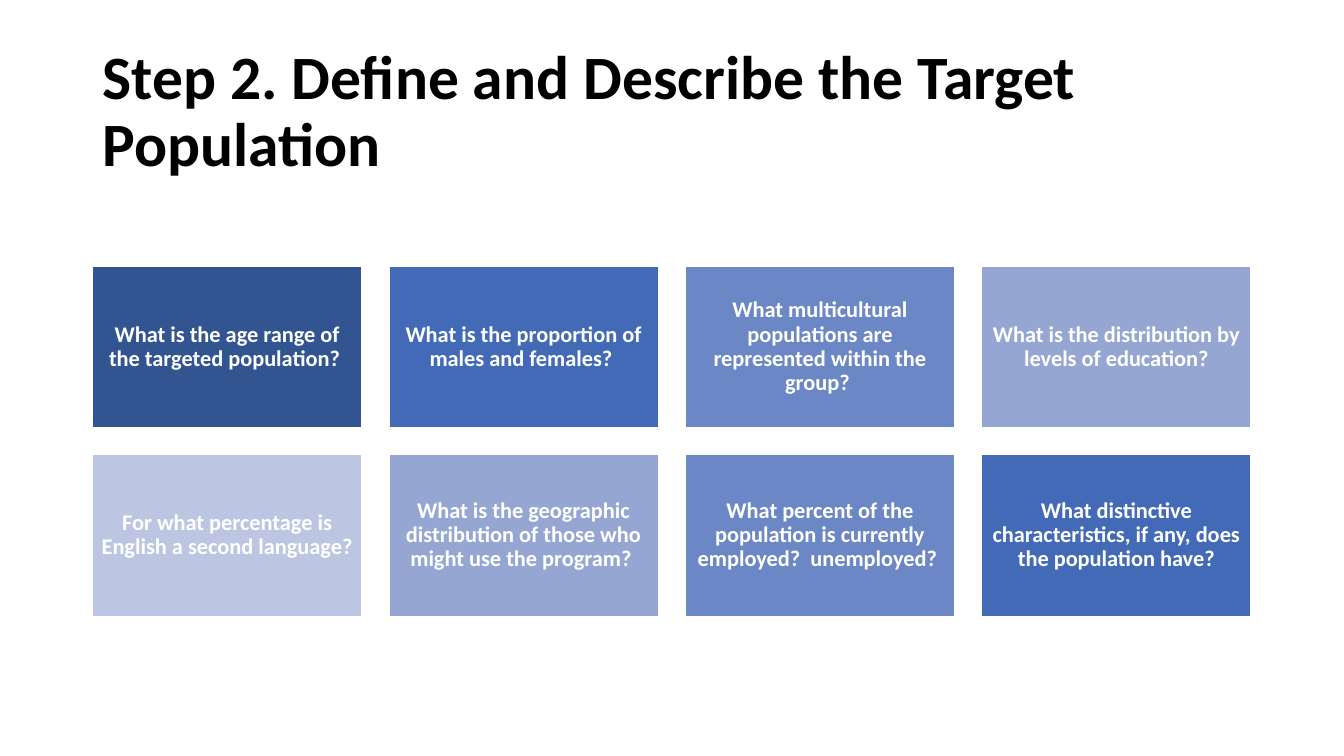
from dataclasses import dataclass

from pptx import Presentation
from pptx.dml.color import RGBColor
from pptx.enum.shapes import MSO_SHAPE
from pptx.enum.text import MSO_ANCHOR, PP_ALIGN
from pptx.slide import Slide
from pptx.text.text import TextFrame
from pptx.util import Cm, Pt

RECTANGLE = MSO_SHAPE.RECTANGLE
MIDDLE = MSO_ANCHOR.MIDDLE
LEFT = PP_ALIGN.LEFT
CENTER = PP_ALIGN.CENTER

FONT = "Calibri"
COLORS = {
    "black": "000000",
    "white": "FFFFFF",
    "navy": "325491",
    "blue": "436AB7",
    "medium": "6C87C5",
    "light": "95A6D3",
    "pale": "BCC6E2",
}

COLUMNS = 4
GRID_LEFT = 2.33
GRID_TOP = 6.71
CARD_WIDTH = 6.79
CARD_HEIGHT = 4.07
GAP = 0.68
CARD_INSET = 0.17


@dataclass(frozen=True)
class Question:
    text: str
    color: str


QUESTIONS = [
    Question("What is the age range of the targeted population? ", "navy"),
    Question("What is the proportion of males and females? ", "blue"),
    Question("What multicultural populations are represented within the group? ", "medium"),
    Question("What is the distribution by levels of education?", "light"),
    Question("For what percentage is English a second language?", "pale"),
    Question("What is the geographic distribution of those who might use the program? ", "light"),
    Question("What percent of the population is currently employed?  unemployed? ", "medium"),
    Question("What distinctive characteristics, if any, does the population have?", "blue"),
]


def color_of(name: str) -> RGBColor:
    return RGBColor.from_string(COLORS[name])


def write_text(
    text_frame: TextFrame, text: str, *, size: float, color: str, alignment: PP_ALIGN
) -> None:
    text_frame.word_wrap = True
    text_frame.vertical_anchor = MIDDLE
    paragraph = text_frame.paragraphs[0]
    paragraph.alignment = alignment
    paragraph.line_spacing = 0.9
    run = paragraph.add_run()
    run.text = text
    run.font.name = FONT
    run.font.size = Pt(size)
    run.font.bold = True
    run.font.color.rgb = color_of(color)


def add_title(slide: Slide, text: str) -> None:
    title = slide.shapes.title
    title.left, title.top = Cm(GRID_LEFT), Cm(1.01)
    title.width, title.height = Cm(29.21), Cm(3.68)
    write_text(title.text_frame, text, size=44, color="black", alignment=LEFT)


def add_question(slide: Slide, question: Question, row: int, column: int) -> None:
    card = slide.shapes.add_shape(
        RECTANGLE,
        Cm(GRID_LEFT + column * (CARD_WIDTH + GAP)),
        Cm(GRID_TOP + row * (CARD_HEIGHT + GAP)),
        Cm(CARD_WIDTH),
        Cm(CARD_HEIGHT),
    )
    card.shadow.inherit = False
    card.fill.solid()
    card.fill.fore_color.rgb = color_of(question.color)
    card.line.color.rgb = color_of("white")
    card.line.width = Pt(1)
    text_frame = card.text_frame
    text_frame.margin_left = text_frame.margin_right = Cm(CARD_INSET)
    text_frame.margin_top = text_frame.margin_bottom = Cm(CARD_INSET)
    write_text(text_frame, question.text, size=16, color="white", alignment=CENTER)


def main() -> None:
    presentation = Presentation()
    presentation.slide_width = Cm(33.87)
    presentation.slide_height = Cm(19.05)
    title_only = presentation.slide_layouts.get_by_name("Title Only")
    slide = presentation.slides.add_slide(title_only)
    add_title(slide, "Step 2. Define and Describe the Target Population")
    for index, question in enumerate(QUESTIONS):
        row, column = divmod(index, COLUMNS)
        add_question(slide, question, row, column)
    presentation.save("out.pptx")


if __name__ == "__main__":
    main()
